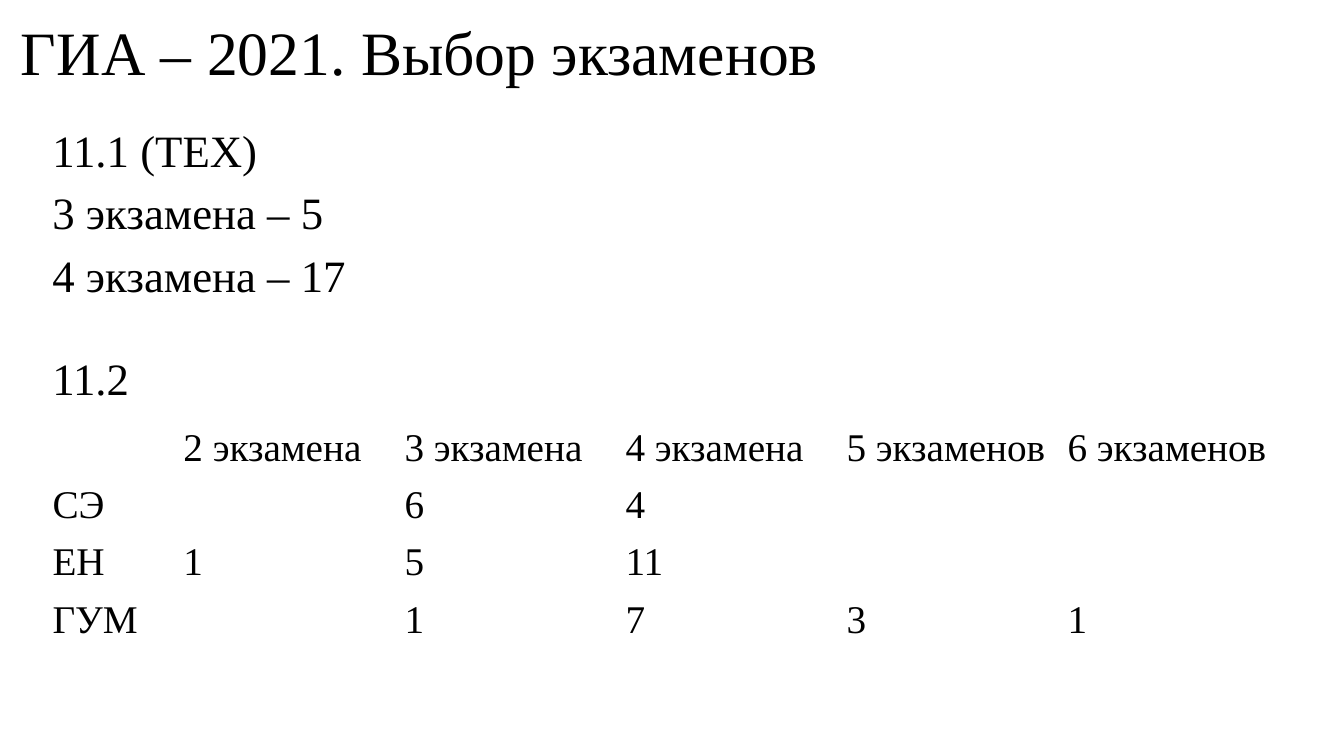
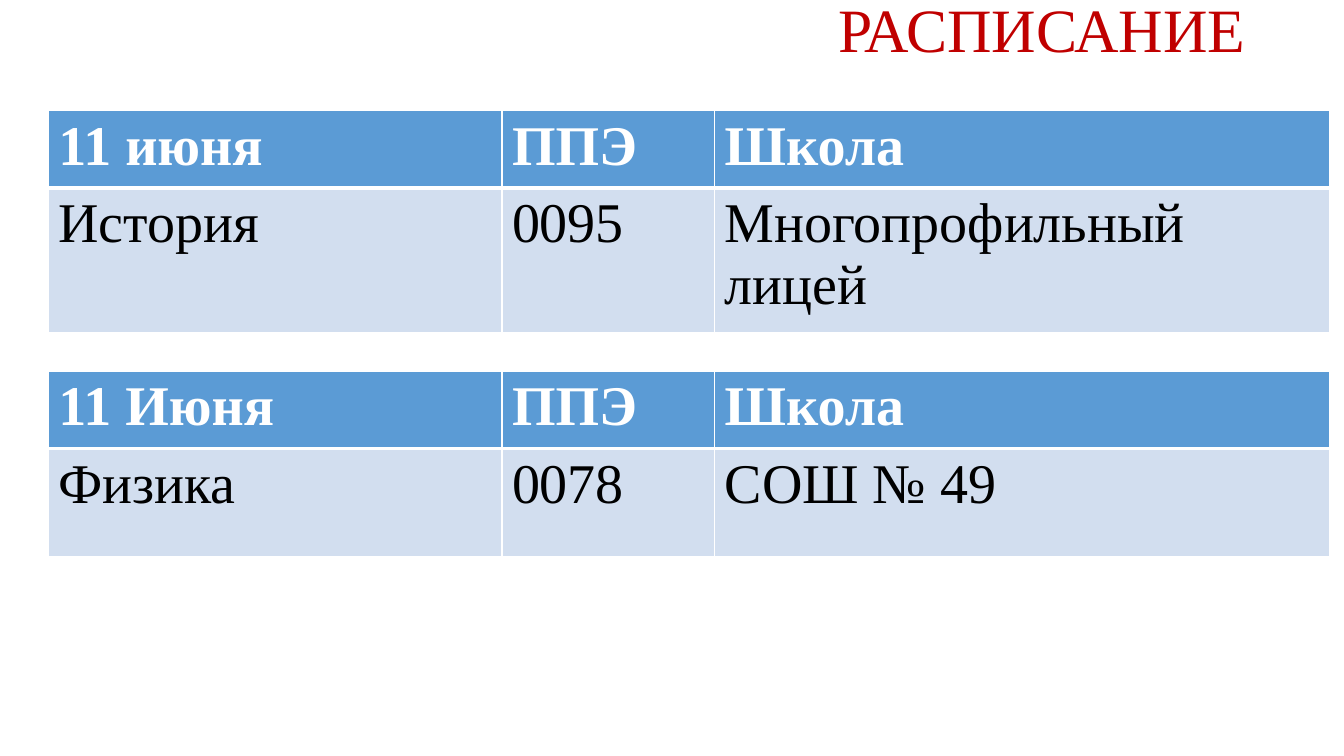
from dataclasses import dataclass

from lxml import etree
from pptx import Presentation
from pptx import util as u
from pptx.dml.color import RGBColor
from pptx.enum import text as t
from pptx.oxml import ns

COLORS = {
    "ink": "000000",
    "white": "FFFFFF",
    "accent": "C00000",
    "header": "5B9BD5",
    "body": "D2DEEF",
}
FONT = "Times New Roman"
TITLE_SIZE = 44
BODY_SIZE = 32
PLAIN_TABLE_STYLE = "{2D5ABB26-0587-4C30-8999-92F81FD0307C}"


@dataclass(frozen=True)
class Box:
    """Place and size in centimetres."""
    left: float
    top: float
    width: float
    height: float

    def lengths(self) -> tuple[u.Length, ...]:
        """Return the four lengths in drawing order."""
        return tuple(u.Cm(v) for v in (self.left, self.top, self.width, self.height))


@dataclass(frozen=True)
class Look:
    """Text and fill of one kind of cell, with its border widths in points."""
    size: float
    color: str = "ink"
    bold: bool = False
    fill: str | None = None
    top: float = 0
    bottom: float = 0
    sides: float = 0


@dataclass(frozen=True)
class Exam:
    """One exam with its date, exam point and school."""
    date: str
    subject: str
    point: str
    school: str
    top: float


COUNT_LOOK = Look(28)
HEADER_LOOK = Look(40, "white", True, "header", top=1, bottom=3, sides=1)
EXAM_LOOK = Look(40, fill="body", top=3, bottom=1, sides=1)

EXAM_COUNTS = [
    ["", "2 экзамена", "3 экзамена", "4 экзамена", "5 экзаменов", "6 экзаменов"],
    ["СЭ", "", "6", "4", "", ""],
    ["ЕН", "1", "5", "11", "", ""],
    ["ГУМ", "", "1", "7", "3", "1"],
]
SCHEDULE = [
    Exam("11 июня", "История", "0095", "Многопрофильный лицей", 2.79),
    Exam("11 Июня", "Физика", "0078", "СОШ № 49", 9.35),
]


def add_run(paragraph, words: str, size: float, color: str, bold: bool = False) -> None:
    """Add one run in the deck font."""
    run = paragraph.add_run()
    run.text = words
    run.font.name = FONT
    run.font.size = u.Pt(size)
    run.font.bold = bold
    run.font.color.rgb = RGBColor.from_string(COLORS[color])


def add_text(slide, box: Box, lines: list[str], size: float, color: str = "ink"):
    """Add a wrapped text box with one paragraph a line and return its frame."""
    frame = slide.shapes.add_textbox(*box.lengths()).text_frame
    frame.word_wrap = True
    for index, line in enumerate(lines):
        paragraph = frame.add_paragraph() if index else frame.paragraphs[0]
        paragraph.line_spacing = 0.9
        add_run(paragraph, line, size, color)
    return frame


def add_title(slide, box: Box, words: str, color: str = "ink") -> None:
    """Add a slide title."""
    frame = add_text(slide, box, [words], TITLE_SIZE, color)
    frame.vertical_anchor = t.MSO_ANCHOR.MIDDLE


def add_body(slide, box: Box, lines: list[str]) -> None:
    """Add justified body lines."""
    for paragraph in add_text(slide, box, lines, BODY_SIZE).paragraphs:
        paragraph.alignment = t.PP_ALIGN.JUSTIFY
        paragraph.space_before = u.Pt(10)


def add_borders(cell, look: Look) -> None:
    """Draw white borders ahead of the fill of a cell."""
    properties = cell._tc.get_or_add_tcPr()
    widths = {"lnL": look.sides, "lnR": look.sides, "lnT": look.top, "lnB": look.bottom}
    for position, (side, width) in enumerate(widths.items()):
        line = etree.Element(ns.qn(f"a:{side}"), w=str(u.Pt(width)))
        fill = etree.SubElement(line, ns.qn("a:solidFill"))
        etree.SubElement(fill, ns.qn("a:srgbClr"), val=COLORS["white"])
        properties.insert(position, line)


def fill_cell(cell, words: str, look: Look) -> None:
    """Write and colour one cell."""
    if words:
        add_run(cell.text_frame.paragraphs[0], words, look.size, look.color, look.bold)
    if look.fill:
        cell.fill.solid()
        cell.fill.fore_color.rgb = RGBColor.from_string(COLORS[look.fill])
        add_borders(cell, look)
    else:
        cell.fill.background()


def add_grid(slide, left: float, top: float, columns: list[float], heights: list[float],
             rows: list[list[str]], looks: list[Look]) -> None:
    """Add a table with one look for each row."""
    box = Box(left, top, sum(columns), sum(heights))
    table = slide.shapes.add_table(len(rows), len(columns), *box.lengths()).table
    table.horz_banding = False
    table._tbl.tblPr.find(ns.qn("a:tableStyleId")).text = PLAIN_TABLE_STYLE
    for column, width in zip(table.columns, columns):
        column.width = u.Cm(width)
    for row, height, words, look in zip(table.rows, heights, rows, looks):
        row.height = u.Cm(height)
        for cell, word in zip(row.cells, words):
            fill_cell(cell, word, look)


def build_choice(slide) -> None:
    """Build the slide on the choice of exams."""
    add_title(slide, Box(0.28, 0.18, 24.84, 2.46), "ГИА – 2021. Выбор экзаменов")
    add_body(slide, Box(1.07, 3.12, 20.9, 4.72),
             ["11.1 (ТЕХ)", "3 экзамена – 5", "4 экзамена – 17"])
    add_grid(slide, 1.07, 10.62, [3.3] + [5.57] * 5, [1.04] * len(EXAM_COUNTS),
             EXAM_COUNTS, [COUNT_LOOK] * len(EXAM_COUNTS))
    add_body(slide, Box(1.07, 8.86, 5.16, 1.75), ["11.2"])


def build_schedule(slide) -> None:
    """Build the slide with the exam schedule."""
    add_title(slide, Box(20.88, -0.41, 11.96, 2.46), "РАСПИСАНИЕ", "accent")
    for exam in SCHEDULE:
        rows = [[exam.date, "ППЭ", "Школа"], [exam.subject, exam.point, exam.school]]
        add_grid(slide, 1.22, exam.top, [11.43, 5.36, 15.49], [1.73, 2.72],
                 rows, [HEADER_LOOK, EXAM_LOOK])


def main() -> None:
    """Build and save the deck."""
    deck = Presentation()
    deck.slide_width, deck.slide_height = u.Cm(33.87), u.Cm(19.05)
    for build in (build_choice, build_schedule):
        build(deck.slides.add_slide(deck.slide_layouts[6]))
    deck.save("out.pptx")


if __name__ == "__main__":
    main()
